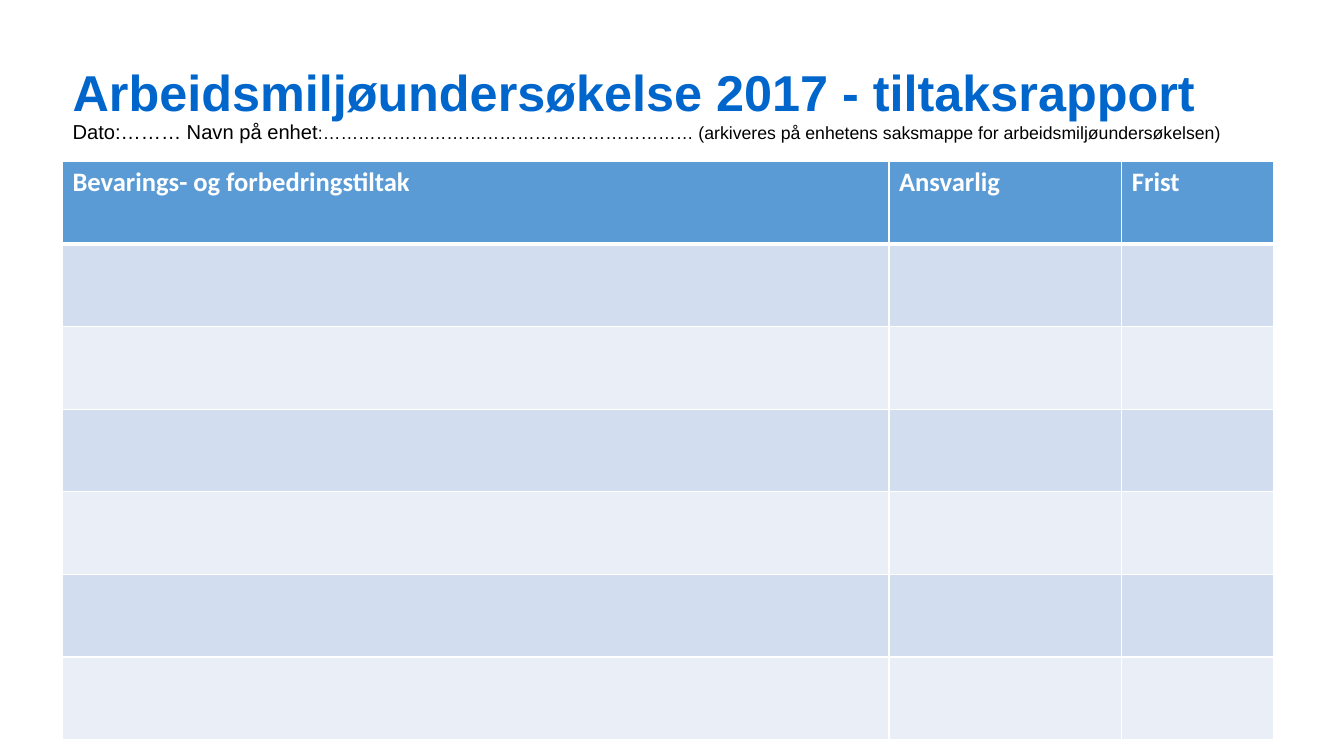
from dataclasses import dataclass

from lxml.etree import SubElement as Sub
from pptx import Presentation as Deck
from pptx.dml.color import RGBColor as Rgb
from pptx.enum.text import MSO_ANCHOR as Anchor, MSO_AUTO_SIZE as Fit, PP_ALIGN as Align
from pptx.oxml.ns import qn
from pptx.util import Pt

HUES = {
    "title": "0066CC", "ink": "000000", "white": "FFFFFF",
    "head": "5B9BD5", "odd": "D2DEEF", "even": "EAEFF7",
}
ROWS = 7
HIGH = 59.04


@dataclass
class Piece:
    text: str
    size: float
    hue: str
    face: str = "Arial"
    bold: bool = False


@dataclass
class Column:
    label: str
    width: float


TITLE = [
    [Piece("Arbeidsmiljøundersøkelse 2017 - tiltaksrapport", 36, "title", bold=True)],
    [
        Piece("Dato:……… Navn på enhet", 14.4, "ink"),
        Piece(":……………………………………………………… (arkiveres på enhetens saksmappe "
              "for arbeidsmiljøundersøkelsen)", 12.6, "ink"),
    ],
]
COLS = [
    Column("Bevarings- og forbedringstiltak", 590.4),
    Column("Ansvarlig", 166.32),
    Column("Frist", 108.72),
]


def apply(item, values: dict) -> None:
    for name, value in values.items():
        setattr(item, name, value)


def write(para, piece: Piece) -> None:
    run = para.add_run()
    run.text = piece.text
    apply(run.font, {"size": Pt(piece.size), "name": piece.face, "bold": piece.bold})
    run.font.color.rgb = Rgb.from_string(HUES[piece.hue])


def edge(cell, side: str, width: float) -> None:
    props = cell._tc.get_or_add_tcPr()
    line = Sub(props, qn(f"a:ln{side}"), w=str(Pt(width)))
    fill = Sub(line, qn("a:solidFill"))
    Sub(fill, qn("a:srgbClr"), val=HUES["white"])


def add_title(slide) -> None:
    title = slide.shapes.title
    apply(title, {"left": Pt(44.64), "top": Pt(27.36),
                  "width": Pt(872.64), "height": Pt(74.16)})
    frame = title.text_frame
    apply(frame, {"word_wrap": True, "auto_size": Fit.NONE,
                  "vertical_anchor": Anchor.TOP, "margin_top": Pt(21.2),
                  "margin_bottom": Pt(0)})
    para = frame.paragraphs[0]
    apply(para, {"alignment": Align.LEFT, "line_spacing": 0.9, "space_before": Pt(0)})
    for row, pieces in enumerate(TITLE):
        if row:
            para.add_line_break()
        for piece in pieces:
            write(para, piece)


def add_grid(slide) -> None:
    wide = sum(col.width for col in COLS)
    grid = slide.shapes.add_table(
        ROWS, len(COLS), Pt(44.64), Pt(115.2), Pt(wide), Pt(ROWS * HIGH)).table
    for row in grid.rows:
        row.height = Pt(HIGH)
    for c, col in enumerate(COLS):
        grid.columns[c].width = Pt(col.width)
        for r in range(ROWS):
            cell = grid.cell(r, c)
            for side in "LRTB":
                edge(cell, side, 3 if r == 0 and side == "B" else 1)
            hue = "head" if r == 0 else "odd" if r % 2 else "even"
            cell.fill.solid()
            cell.fill.fore_color.rgb = Rgb.from_string(HUES[hue])
        write(grid.cell(0, c).text_frame.paragraphs[0],
              Piece(col.label, 19, "white", "Calibri", True))


def main() -> None:
    deck = Deck()
    apply(deck, {"slide_width": Pt(960), "slide_height": Pt(540)})
    slide = deck.slides.add_slide(deck.slide_layouts[5])
    add_title(slide)
    add_grid(slide)
    deck.save("out.pptx")


if __name__ == "__main__":
    main()
